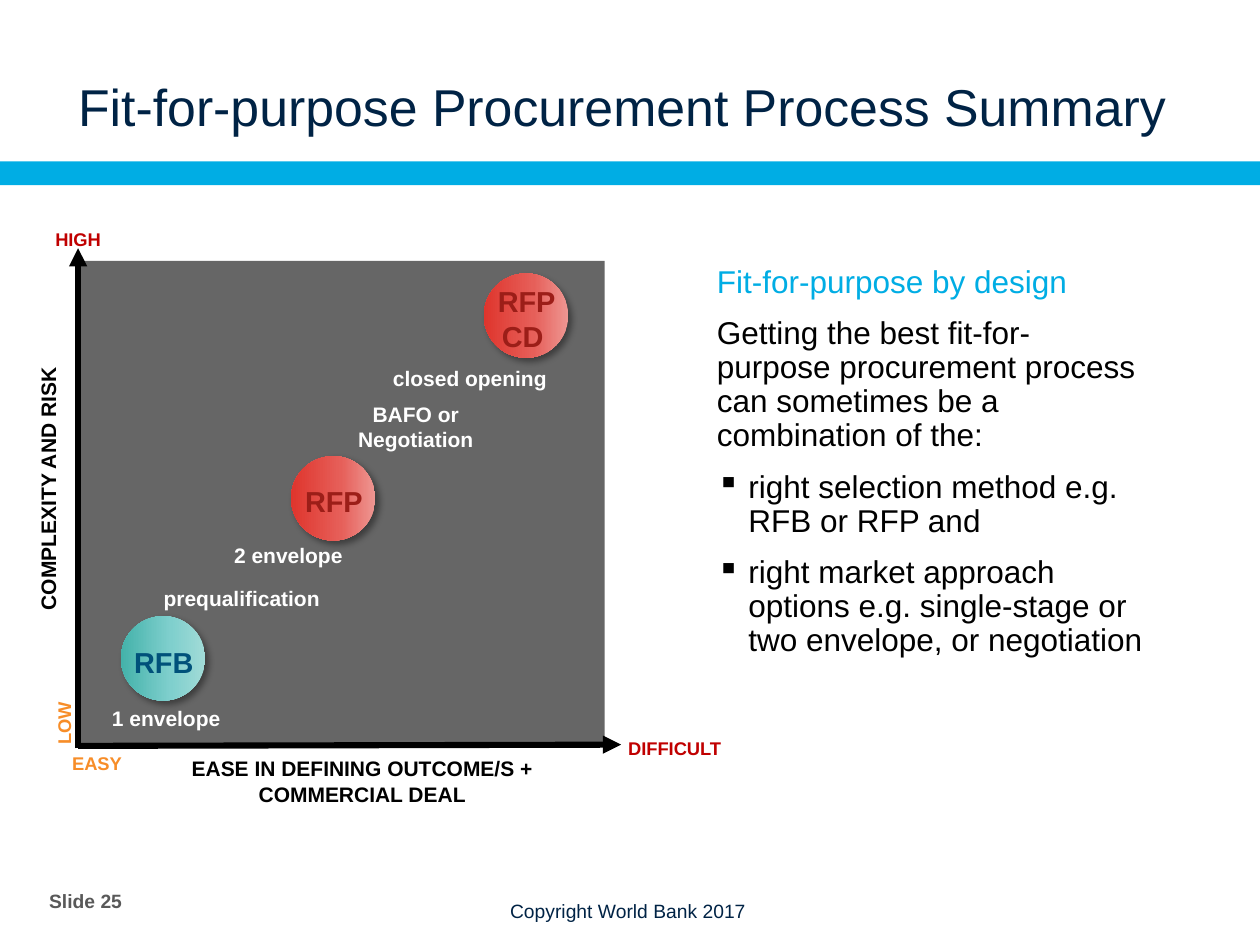
from dataclasses import dataclass, field

from lxml import etree
from pptx import Presentation
from pptx.dml.color import RGBColor
from pptx.enum.shapes import MSO_CONNECTOR, MSO_SHAPE
from pptx.enum.text import MSO_ANCHOR, MSO_AUTO_SIZE, PP_ALIGN
from pptx.oxml import parse_xml
from pptx.oxml.ns import nsdecls, qn
from pptx.util import Inches, Pt

LEFT, CENTER = PP_ALIGN.LEFT, PP_ALIGN.CENTER
TOP, MIDDLE, BOTTOM = MSO_ANCHOR.TOP, MSO_ANCHOR.MIDDLE, MSO_ANCHOR.BOTTOM
RECTANGLE, OVAL = MSO_SHAPE.RECTANGLE, MSO_SHAPE.OVAL
FONT = "Arial"
COLORS = {
    "navy": "002345", "cyan": "00ADE4", "grey": "595959", "panel": "666666",
    "black": "000000", "white": "FFFFFF", "orange": "F78D28", "red": "C00000",
    "teal text": "00517A", "red text": "9C1E18",
}
GRADIENTS = {
    "teal": {0: "A1DBD7", 41: "7FCFCD", 100: "44B2AA"},
    "red": {0: "EE9692", 41: "E65F59", 100: "DF352D"},
}
# The slide is a grid of square cells
COLUMNS, ROWS = 100, 75
CELL = Inches(0.1)
INSETS = (0.1, 0.05)
BUBBLE = 6.7


@dataclass
class Area:
    column: float
    row: float
    columns: float
    rows: float

    def emu(self) -> list[int]:
        return [round(v * CELL) for v in (self.column, self.row, self.columns, self.rows)]


@dataclass
class Label:
    text: str
    area: Area
    color: str = "white"
    size: float = 12
    bold: bool = True
    align: PP_ALIGN = CENTER
    frame: dict = field(default_factory=dict)
    insets: tuple = INSETS
    rotation: int = 0


@dataclass
class Bubble:
    text: str
    column: float
    row: float
    gradient: str
    color: str


def rgb(name: str) -> RGBColor:
    return RGBColor.from_string(COLORS[name])


def apply(target, values: dict) -> None:
    for name, value in values.items():
        setattr(target, name, value)


def add_span(para, text: str, color: str, size: float, bold: bool) -> None:
    span = para.add_run()
    span.text = text
    apply(span.font, {"name": FONT, "size": Pt(size), "bold": bold})
    span.font.color.rgb = rgb(color)


def set_frame(frame, insets: tuple, values: dict) -> None:
    side, end = (Inches(inset) for inset in insets)
    apply(frame, {"word_wrap": True, "auto_size": MSO_AUTO_SIZE.NONE,
                  "vertical_anchor": TOP, "margin_left": side, "margin_right": side,
                  "margin_top": end, "margin_bottom": end} | values)


def fill_label(box, label: Label) -> None:
    apply(box, dict(zip(("left", "top", "width", "height"), label.area.emu())))
    box.rotation = label.rotation
    set_frame(box.text_frame, label.insets, label.frame)
    for index, line in enumerate(label.text.split("\n")):
        para = box.text_frame.add_paragraph() if index else box.text_frame.paragraphs[0]
        para.alignment = label.align
        add_span(para, line, label.color, label.size, label.bold)


def add_label(shapes, label: Label) -> None:
    fill_label(shapes.add_textbox(*label.area.emu()), label)


def add_block(shapes, area: Area, color: str) -> None:
    block = shapes.add_shape(RECTANGLE, *area.emu())
    block.shadow.inherit = False
    block.fill.solid()
    block.fill.fore_color.rgb = rgb(color)
    block.line.fill.background()


def add_bubble(shapes, bubble: Bubble) -> None:
    group = shapes.add_group_shape()
    disc = group.shapes.add_shape(
        OVAL, *Area(bubble.column, bubble.row, BUBBLE, BUBBLE).emu())
    disc.line.fill.background()
    stops = "".join(f'<a:gs pos="{position * 1000}"><a:srgbClr val="{color}"/></a:gs>'
                    for position, color in GRADIENTS[bubble.gradient].items())
    properties = disc.element.spPr
    properties.find(qn("a:ln")).addprevious(parse_xml(
        f'<a:gradFill {nsdecls("a")}><a:gsLst>{stops}</a:gsLst>'
        '<a:lin ang="10800000" scaled="0"/></a:gradFill>'))
    properties.append(parse_xml(
        f'<a:effectLst {nsdecls("a")}><a:outerShdw blurRad="{Pt(4)}" dist="{Pt(3)}" '
        'dir="2700000" algn="tl" rotWithShape="0"><a:srgbClr val="000000">'
        '<a:alpha val="40000"/></a:srgbClr></a:outerShdw></a:effectLst>'))
    add_label(group.shapes, Label(
        bubble.text, Area(bubble.column - 2.75, bubble.row + 0.95, 12.3, 5.3),
        bubble.color, 16.5, frame={"vertical_anchor": MIDDLE}))


def add_axis(shapes, start: tuple, end: tuple) -> None:
    axis = shapes.add_connector(
        MSO_CONNECTOR.STRAIGHT, *(round(v * CELL) for v in start + end))
    axis.line.width = Pt(3.5)
    axis.line.color.rgb = rgb("black")
    etree.SubElement(axis.line._get_or_add_ln(), qn("a:tailEnd"), type="triangle")
    etree.SubElement(axis.element.spPr, qn("a:effectLst"))


def add_message(shapes, area: Area, lines: list[tuple[str, str, bool]]) -> None:
    frame = shapes.add_textbox(*area.emu()).text_frame
    set_frame(frame, (0.07, 0.04), {})
    for index, (text, color, bulleted) in enumerate(lines):
        para = frame.add_paragraph() if index else frame.paragraphs[0]
        apply(para, {"line_spacing": 0.9, "space_before": Pt(10 if index else 0)})
        if bulleted:
            properties = para._p.get_or_add_pPr()
            properties.set("marL", str(Inches(0.25)))
            properties.set("indent", str(-Inches(0.25)))
            etree.SubElement(properties, qn("a:buChar"), char="▪")
        add_span(para, text, color, 18, False)


TITLE = Label("Fit-for-purpose Procurement Process Summary", Area(6.2, 2.6, 87.1, 8.3),
              "navy", 29.6, False, LEFT, {"vertical_anchor": BOTTOM}, (0, 0))
FOOTERS = [
    Label("Copyright World Bank 2017", Area(39.5, 70.9, 21.3, 2.9), "navy", 11, False,
          LEFT, {"word_wrap": False}),
    Label("Slide 25", Area(3.9, 69.5, 6.9, 4), "grey", 11, True, LEFT,
          {"vertical_anchor": MIDDLE}, (0, 0)),
]
MESSAGE = [
    ("Fit-for-purpose by design", "cyan", False),
    ("Getting the best fit-for-purpose procurement process can sometimes be a "
     "combination of the:", "black", False),
    ("right selection method e.g. RFB or RFP and", "black", True),
    ("right market approach options e.g. single-stage or two envelope, or negotiation",
     "black", True),
]
AXIS_LABELS = [
    Label("EASY", Area(4.7, 59.2, 6, 2.8), "orange", 10.5),
    Label("DIFFICULT", Area(48.1, 58, 10.9, 2.8), "red", 10.5),
    Label("COMPLEXITY AND RISK", Area(-14.1, 37.3, 35.8, 3), "black", rotation=270),
    Label("LOW", Area(2.1, 56, 6, 2.8), "orange", 10.5, rotation=270),
    Label("HIGH", Area(3.2, 17.6, 6, 2.8), "red", 10.5),
    Label("EASE IN DEFINING OUTCOME/S + COMMERCIAL DEAL", Area(13.7, 59.5, 30.1, 5), "black"),
]
BUBBLES = [
    Bubble("RFB", 9.6, 48.9, "teal", "teal text"),
    Bubble("RFP\nCD ", 38.4, 21.7, "red", "red text"),
    Bubble("RFP", 23.1, 36.2, "red", "red text"),
]
NOTES = [
    Label("1 envelope", Area(7.9, 55.5, 10.7, 3), align=LEFT, frame={"word_wrap": False}),
    Label("prequalification", Area(12, 46, 15.9, 3), align=LEFT),
    Label("2 envelope", Area(17.6, 42.6, 11.6, 3), align=LEFT),
    Label("closed opening", Area(30.2, 28.5, 15.1, 3), align=LEFT),
    Label("BAFO or Negotiation", Area(25.5, 31.4, 15, 5)),
]


def main() -> None:
    deck = Presentation()
    deck.slide_width, deck.slide_height = COLUMNS * CELL, ROWS * CELL
    page = deck.slides.add_slide(deck.slide_layouts[5])
    shapes = page.shapes

    # Title, band and footers
    fill_label(shapes.title, TITLE)
    add_block(shapes, Area(0, 12.8, COLUMNS, 1.9), "cyan")
    for label in FOOTERS:
        add_label(shapes, label)

    # Message on the right
    add_message(shapes, Area(56.2, 20.7, 35.2, 36.1), MESSAGE)

    # Risk chart: panel, bubbles, labels and axes
    add_block(shapes, Area(6.3, 20.7, 41.7, 38.4), "panel")
    for bubble in BUBBLES:
        add_bubble(shapes, bubble)
    for label in AXIS_LABELS + NOTES:
        add_label(shapes, label)
    add_axis(shapes, (6.2, 59.4), (6.2, 19.7))
    add_axis(shapes, (6.2, 59.2), (49.3, 59.1))

    deck.save("out.pptx")


if __name__ == "__main__":
    main()
